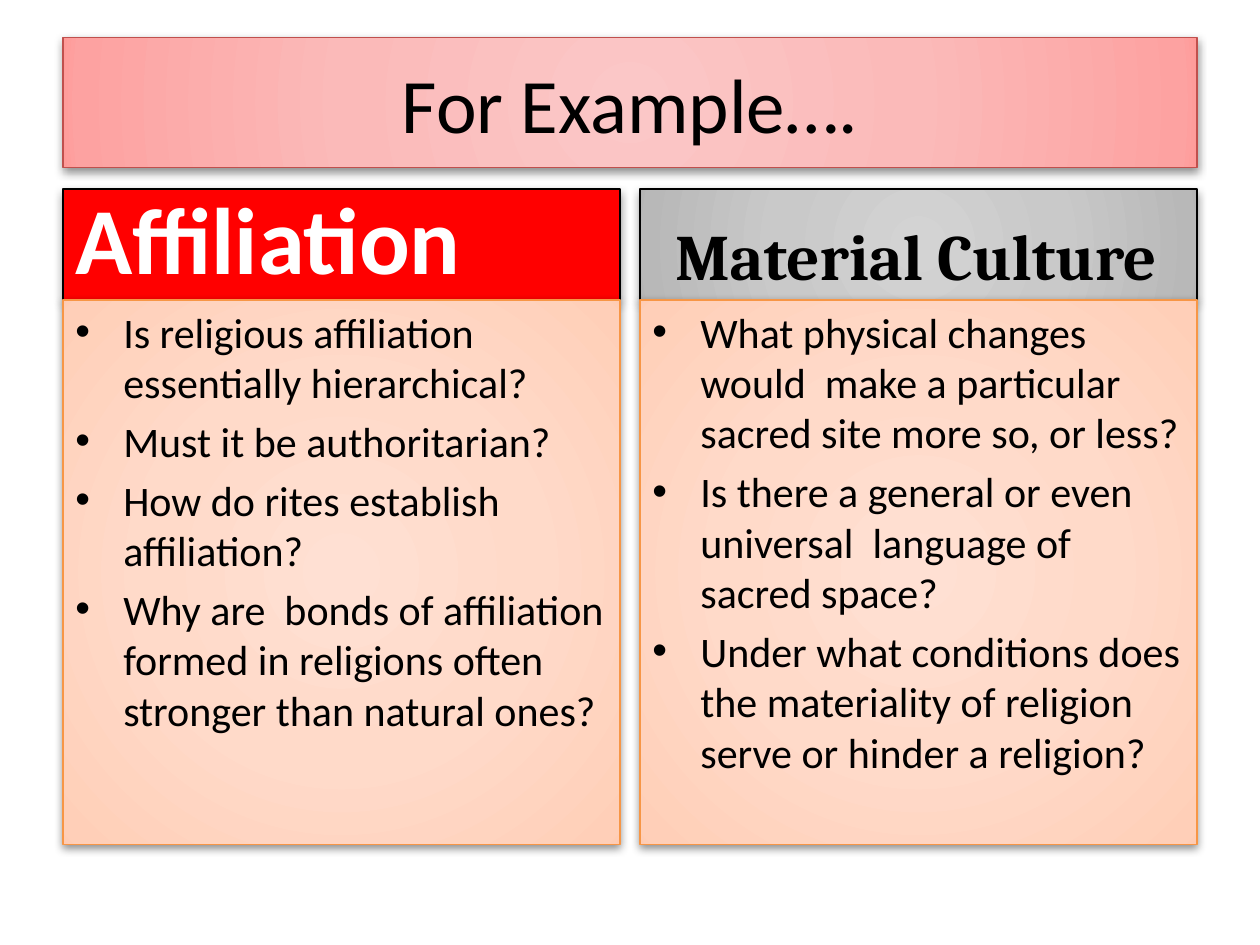
import pptx
import pptx.util
import pptx.dml.color
import pptx.enum.shapes
import pptx.enum.text
import pptx.oxml
import pptx.oxml.ns
from pptx.util import Inches

COLORS = {
    "black": "000000",
    "white": "FFFFFF",
    "red": "FF0000",
    "title_line": "C0504D",
    "body_line": "F79646",
}
GRADIENTS = {
    "pink": ["FBC7C7", "FBBAB9", "FDA2A1", "FF9A98"],
    "peach": ["FFE0D3", "FFDAC9", "FFCFB8", "FFCBB3"],
    "gray": ["D3D3D3", "C9C9C9", "B8B8B8", "B2B2B2"],
}
STOPS = [0, 50, 97, 100]
MARGIN, GAP_FREE_WIDTH, COLUMN_WIDTH = 0.5, 9, 4.42
HEADING_TOP, HEADING_HEIGHT, BODY_HEIGHT = 1.5, 0.88, 4.32
BULLET_INDENT = 0.38

COLUMNS = [
    {
        "heading": "Affiliation", "fill": "red", "color": "white",
        "font": "Calibri", "size": 54, "indent": 0,
        "questions": [
            "Is religious affiliation essentially hierarchical?",
            "Must it be authoritarian?",
            "How do rites establish affiliation?",
            "Why are  bonds of affiliation formed in religions often stronger than natural ones?",
        ],
    },
    {
        "heading": "Material Culture", "fill": "gray", "color": "black",
        "font": "Cambria", "size": 37, "indent": 0.18,
        "questions": [
            "What physical changes would  make a particular sacred site more so, or less?",
            "Is there a general or even universal  language of  sacred space?",
            "Under what conditions does the materiality of religion serve or hinder a religion?",
        ],
    },
]


def rgb(name):
    return pptx.dml.color.RGBColor.from_string(COLORS[name])


def xml(tag, inner, attrs=""):
    ns = pptx.oxml.ns.nsdecls("a")
    return pptx.oxml.parse_xml(f"<a:{tag} {ns} {attrs}>{inner}</a:{tag}>")


def set_fill(sp, name):
    """Fill with a plain colour, or with a radial gradient of that name."""
    sp.fill.solid()
    if name in COLORS:
        sp.fill.fore_color.rgb = rgb(name)
        return
    stops = "".join(
        f'<a:gs pos="{pos * 1000}"><a:srgbClr val="{color}"/></a:gs>'
        for pos, color in zip(STOPS, GRADIENTS[name]))
    center = '<a:fillToRect l="50000" t="50000" r="50000" b="50000"/>'
    gradient = xml("gradFill", f"<a:gsLst>{stops}</a:gsLst>"
                               f'<a:path path="circle">{center}</a:path>')
    spPr = sp._element.spPr
    spPr.replace(spPr.find(pptx.oxml.ns.qn("a:solidFill")), gradient)


def style_panel(sp, fill, line, anchor):
    set_fill(sp, fill)
    sp.line.color.rgb = rgb(line)
    sp.line.width = pptx.util.Pt(0.75)
    sp.shadow.inherit = False
    effects = sp._element.spPr.find(pptx.oxml.ns.qn("a:effectLst"))
    effects.append(xml(
        "outerShdw",
        '<a:srgbClr val="000000"><a:alpha val="43000"/></a:srgbClr>',
        'blurRad="63500" dist="25400" dir="5400000" rotWithShape="0"'))
    sp.text_frame.word_wrap = True
    sp.text_frame.vertical_anchor = anchor


def add_panel(slide, left, top, height, fill, line, anchor):
    sp = slide.shapes.add_shape(
        pptx.enum.shapes.MSO_SHAPE.RECTANGLE,
        Inches(left), Inches(top), Inches(COLUMN_WIDTH), Inches(height))
    style_panel(sp, fill, line, anchor)
    return sp


def write(p, text, size, color="black", font="Calibri", bold=False, align="LEFT"):
    p.text = text
    p.alignment = getattr(pptx.enum.text.PP_ALIGN, align)
    for r in p.runs:
        r.font.size = pptx.util.Pt(size)
        r.font.name = font
        r.font.bold = bold
        r.font.color.rgb = rgb(color)


def set_indent(p, left, first=0):
    pPr = p._p.get_or_add_pPr()
    pPr.set("marL", str(Inches(left)))
    pPr.set("indent", str(Inches(first)))
    return pPr


def set_title(slide, text):
    sp = slide.shapes.title
    sp.left, sp.top = Inches(MARGIN), Inches(0.3)
    sp.width, sp.height = Inches(GAP_FREE_WIDTH), Inches(1.03)
    style_panel(sp, "pink", "title_line", pptx.enum.text.MSO_ANCHOR.MIDDLE)
    write(sp.text_frame.paragraphs[0], text, 44, align="CENTER")


def add_heading(slide, left, column):
    sp = add_panel(slide, left, HEADING_TOP, HEADING_HEIGHT, column["fill"],
                   "black", pptx.enum.text.MSO_ANCHOR.BOTTOM)
    p = sp.text_frame.paragraphs[0]
    write(p, column["heading"], column["size"], column["color"],
          column["font"], bold=True)
    p.space_before = pptx.util.Pt(column["size"] * 0.2)
    set_indent(p, column["indent"])


def add_questions(slide, left, questions):
    sp = add_panel(slide, left, HEADING_TOP + HEADING_HEIGHT, BODY_HEIGHT,
                   "peach", "body_line", pptx.enum.text.MSO_ANCHOR.TOP)
    tf = sp.text_frame
    for i, question in enumerate(questions):
        p = tf.add_paragraph() if i else tf.paragraphs[0]
        write(p, question, 24)
        p.space_before = pptx.util.Pt(4.8)
        pPr = set_indent(p, BULLET_INDENT, -BULLET_INDENT)
        pPr.append(xml("buFont", "", 'typeface="Arial"'))
        pPr.append(xml("buChar", "", 'char="•"'))


def main():
    prs = pptx.Presentation()
    prs.slide_width, prs.slide_height = Inches(10), Inches(7.5)
    slide = prs.slides.add_slide(prs.slide_layouts[5])
    set_title(slide, "For Example….")
    step = GAP_FREE_WIDTH - COLUMN_WIDTH
    for i, column in enumerate(COLUMNS):
        left = MARGIN + i * step
        add_heading(slide, left, column)
        add_questions(slide, left, column["questions"])
    prs.save("out.pptx")


if __name__ == "__main__":
    main()
